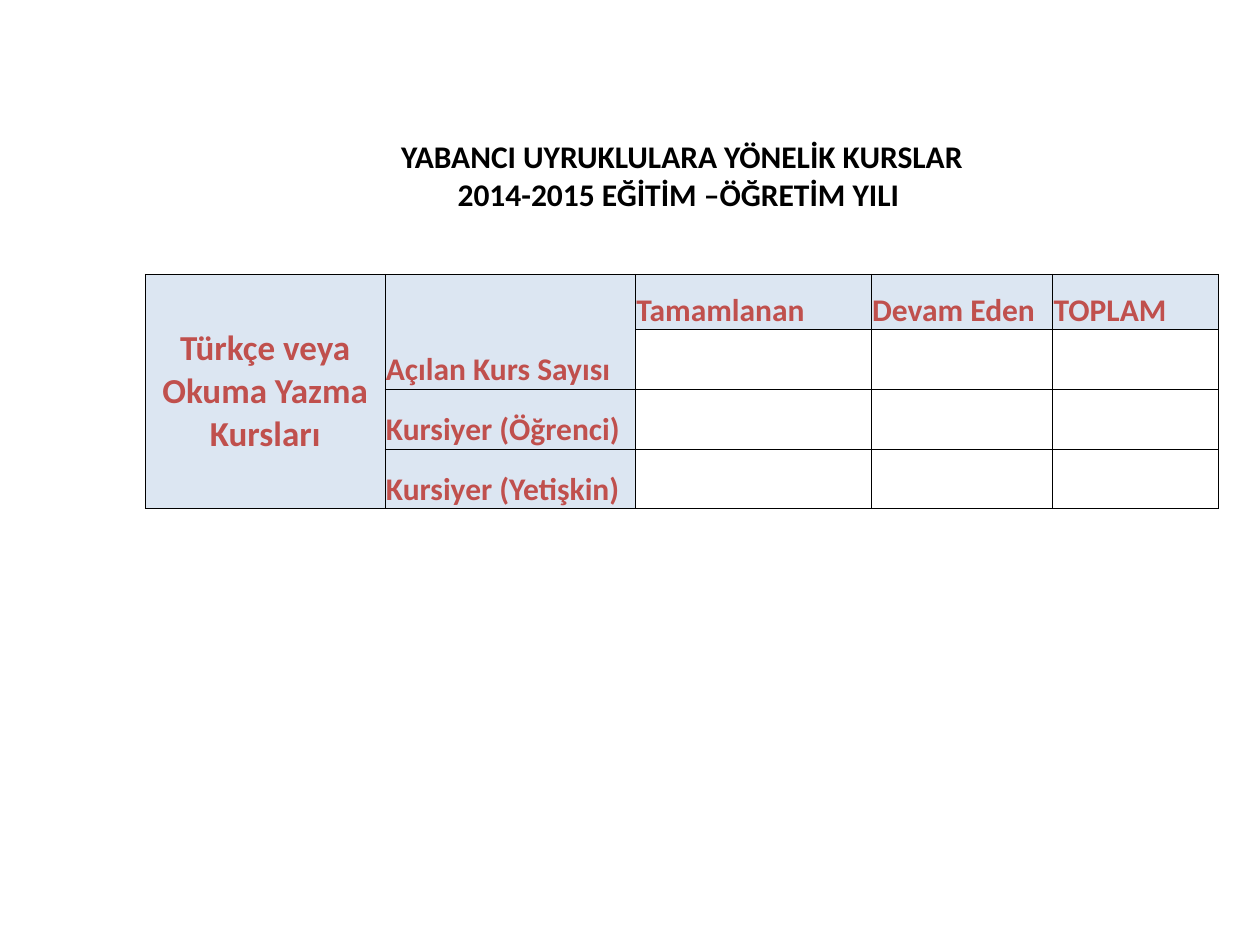
from dataclasses import dataclass

import pptx
import pptx.dml.color
import pptx.enum.text
import pptx.oxml
import pptx.oxml.ns
import pptx.table
import pptx.util
from pptx.util import Cm

RGBColor = pptx.dml.color.RGBColor
Align = pptx.enum.text.PP_ALIGN
Anchor = pptx.enum.text.MSO_ANCHOR

BLACK = RGBColor(0x00, 0x00, 0x00)
RED = RGBColor(0xC0, 0x50, 0x4D)
PALE_BLUE = RGBColor(0xDC, 0xE6, 0xF2)

COLUMN_WIDTHS = [4.83, 5.05, 4.75, 3.66, 3.35]
ROW_HEIGHTS = [3.07, 1.19, 1.12, 1.2, 1.2, 1.2]
GRID_TOP = 2  # first row of the bordered grid


@dataclass
class Label:
    row: int
    col: int
    lines: list[str]
    rows: int = 1
    cols: int = 1
    size: int = 18
    color: RGBColor = RED
    align: Align = Align.LEFT
    anchor: Anchor = Anchor.BOTTOM


TITLE = Label(0, 0, ["YABANCI UYRUKLULARA YÖNELİK KURSLAR",
                     "2014-2015 EĞİTİM –ÖĞRETİM YILI "],
              cols=5, color=BLACK, align=Align.CENTER)
LABELS = [
    Label(2, 0, ["Türkçe veya\vOkuma Yazma Kursları"], rows=4, size=20,
          align=Align.CENTER, anchor=Anchor.MIDDLE),
    Label(2, 1, ["Açılan Kurs Sayısı"], rows=2),
    Label(2, 2, ["Tamamlanan"]),
    Label(2, 3, ["Devam Eden"]),
    Label(2, 4, ["TOPLAM"]),
    Label(4, 1, ["Kursiyer (Öğrenci)"]),
    Label(5, 1, ["Kursiyer (Yetişkin)"]),
]


def set_borders(cell: pptx.table._Cell, sides: str) -> None:
    """Rule the sides named by the letters L, R, T, B and clear the others."""
    tc_pr = cell._tc.get_or_add_tcPr()
    for i, side in enumerate("LRTB"):
        fill = (f'<a:solidFill><a:srgbClr val="{BLACK}"/></a:solidFill>'
                if side in sides else "<a:noFill/>")
        tc_pr.insert(i, pptx.oxml.parse_xml(
            f'<a:ln{side} {pptx.oxml.ns.nsdecls("a")} w="{pptx.util.Pt(0.5)}">'
            f"{fill}</a:ln{side}>"))


def format_cell(cell: pptx.table._Cell, row: int) -> None:
    cell.margin_left = cell.margin_right = cell.margin_top = Cm(0.02)
    cell.margin_bottom = 0
    cell.fill.background()
    set_borders(cell, "LRTB" if row >= GRID_TOP else "B" if row == GRID_TOP - 1 else "")


def add_label(table: pptx.table.Table, label: Label) -> None:
    last_row, last_col = label.row + label.rows - 1, label.col + label.cols - 1
    cell = table.cell(label.row, label.col)
    if label.rows * label.cols > 1:
        cell.merge(table.cell(last_row, last_col))
    cell.vertical_anchor = label.anchor
    tf = cell.text_frame
    for i, line in enumerate(label.lines):
        p = tf.add_paragraph() if i else tf.paragraphs[0]
        p.alignment = label.align
        for j, part in enumerate(line.split("\v")):
            if j:
                p.add_line_break()
            r = p.add_run()
            r.text = part
            r.font.name = "Calibri"
            r.font.size = pptx.util.Pt(label.size)
            r.font.bold = True
            r.font.color.rgb = label.color


def fill_label(table: pptx.table.Table, label: Label) -> None:
    for row in range(label.row, label.row + label.rows):
        cell = table.cell(row, label.col)
        cell.fill.solid()
        cell.fill.fore_color.rgb = PALE_BLUE


def main() -> None:
    prs = pptx.Presentation()
    prs.slide_width, prs.slide_height = Cm(25.4), Cm(19.05)
    s = prs.slides.add_slide(prs.slide_layouts[6])

    table = s.shapes.add_table(
        len(ROW_HEIGHTS), len(COLUMN_WIDTHS), Cm(2.93), Cm(1.27),
        Cm(sum(COLUMN_WIDTHS)), Cm(sum(ROW_HEIGHTS))).table
    table.first_row = table.horz_banding = False
    for column, width in zip(table.columns, COLUMN_WIDTHS):
        column.width = Cm(width)
    for i, (row, height) in enumerate(zip(table.rows, ROW_HEIGHTS)):
        row.height = Cm(height)
        for cell in row.cells:
            format_cell(cell, i)

    table.cell(1, 0).merge(table.cell(1, 3))
    add_label(table, TITLE)
    for label in LABELS:
        add_label(table, label)
        fill_label(table, label)

    prs.save("out.pptx")


if __name__ == "__main__":
    main()
